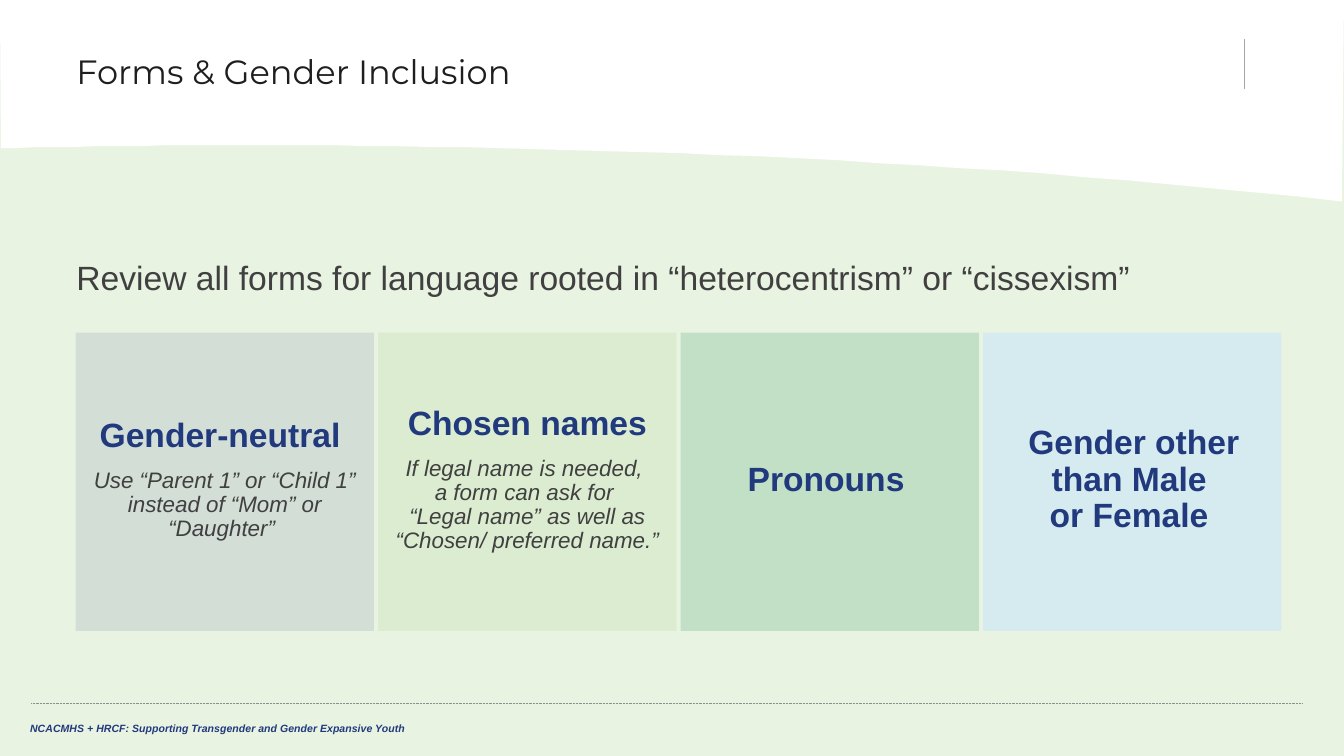
from dataclasses import dataclass

import pptx
import pptx.dml.color
import pptx.enum.dml
import pptx.enum.shapes
import pptx.enum.text
import pptx.oxml.ns
import pptx.presentation
import pptx.shapes.autoshape
import pptx.slide
import pptx.text.text
import pptx.util
from lxml import etree

EMU_PER_PX = 9144  # 100 px to the inch
CURVE_STEPS = 40

Align = pptx.enum.text.PP_ALIGN
Anchor = pptx.enum.text.MSO_ANCHOR
Point = tuple[float, float]


@dataclass(frozen=True)
class Theme:
    background: str = "E9F3E2"
    white: str = "FFFFFF"
    navy: str = "21397D"
    title: str = "1E1E1E"
    body: str = "404040"
    green: str = "92C56E"
    emerald: str = "1A8F52"
    sky: str = "D6EBEF"
    footer_rule: str = "8E8E8E"
    header_rule: str = "A5A5A5"
    title_font: str = "Montserrat"
    body_font: str = "Arial"
    heading_size: float = 24
    detail_size: float = 16
    footer_size: float = 7.5


THEME = Theme()


@dataclass(frozen=True)
class Box:
    left: int
    top: int
    width: int
    height: int


@dataclass(frozen=True)
class TextStyle:
    size: float
    color: str
    font: str = THEME.body_font
    bold: bool = False
    italic: bool = False


@dataclass(frozen=True)
class Rule:
    start: Point
    end: Point
    color: str
    dash: pptx.enum.dml.MSO_LINE | None = None


@dataclass(frozen=True)
class Card:
    fill: str
    opacity: int
    text_left: int
    text_width: int
    heading: str
    detail: str = ""


TITLE = TextStyle(THEME.heading_size, THEME.title, THEME.title_font)
LEAD = TextStyle(THEME.heading_size, THEME.body)
HEADING = TextStyle(THEME.heading_size, THEME.navy, bold=True)
DETAIL = TextStyle(THEME.detail_size, THEME.body, italic=True)
FOOTER = TextStyle(THEME.footer_size, THEME.navy, bold=True, italic=True)

CARD_LEFT, CARD_TOP, CARD_SIDE, CARD_PITCH = 75, 330, 296, 300
CARD_TEXT_TOP, CARD_TEXT_HEIGHT = 328, 297
CARDS = (
    Card(THEME.navy, 11, 76, 294, "Gender-neutral ",
         "Use “Parent 1” or “Child 1” instead of “Mom” or “Daughter” "),
    Card(THEME.green, 14, 374, 298, "Chosen names",
         "If legal name is needed, \na form can ask for \n"
         "“Legal name” as well as “Chosen/ preferred name.”"),
    Card(THEME.emerald, 19, 680, 288, "Pronouns "),
    Card(THEME.sky, 100, 977, 295, "Gender other than Male \nor Female "),
)
RULES = (
    Rule((31, 698), (1291, 698), THEME.footer_rule, pptx.enum.dml.MSO_LINE.ROUND_DOT),
    Rule((1234, 88), (1234, 39), THEME.header_rule),
)


def emu(px: float) -> pptx.util.Emu:
    return pptx.util.Emu(round(px * EMU_PER_PX))


def rgb(color: str) -> pptx.dml.color.RGBColor:
    return pptx.dml.color.RGBColor.from_string(color)


def paint(shape: pptx.shapes.autoshape.Shape, color: str, opacity: int = 100) -> None:
    """Give a shape a plain fill, with no line and no shadow."""
    shape.shadow.inherit = False
    shape.line.fill.background()
    shape.fill.solid()
    shape.fill.fore_color.rgb = rgb(color)
    if opacity < 100:
        color_element = shape.fill._xPr.find(".//" + pptx.oxml.ns.qn("a:srgbClr"))
        alpha = etree.SubElement(color_element, pptx.oxml.ns.qn("a:alpha"))
        alpha.set("val", str(opacity * 1000))


def add_styled_text(paragraph: pptx.text.text._Paragraph, text: str, style: TextStyle) -> None:
    for index, line in enumerate(text.split("\n")):
        if index:
            paragraph.add_line_break()
        run = paragraph.add_run()
        run.text = line
        run.font.name = style.font
        run.font.size = pptx.util.Pt(style.size)
        run.font.bold = style.bold
        run.font.italic = style.italic
        run.font.color.rgb = rgb(style.color)


def add_text(slide: pptx.slide.Slide, box: Box, parts: list[tuple[str, TextStyle]],
             align: Align = Align.LEFT, anchor: Anchor = Anchor.TOP,
             line_spacing: float = 0.9) -> None:
    shape = slide.shapes.add_textbox(
        emu(box.left), emu(box.top), emu(box.width), emu(box.height))
    frame = shape.text_frame
    frame.word_wrap = True
    frame.vertical_anchor = anchor
    for index, (text, style) in enumerate(parts):
        paragraph = frame.add_paragraph() if index else frame.paragraphs[0]
        paragraph.alignment = align
        paragraph.line_spacing = line_spacing
        if index:
            paragraph.space_before = pptx.util.Pt(10)
        add_styled_text(paragraph, text, style)


def curve_points(start: Point, control_1: Point, control_2: Point, end: Point) -> list[Point]:
    """Sample a cubic curve at equal steps."""
    points = []
    for step in range(CURVE_STEPS + 1):
        t = step / CURVE_STEPS
        weights = ((1 - t) ** 3, 3 * t * (1 - t) ** 2, 3 * t * t * (1 - t), t ** 3)
        x, y = (sum(weight * value for weight, value in zip(weights, axis))
                for axis in zip(start, control_1, control_2, end))
        points.append((x, y))
    return points


def add_header(slide: pptx.slide.Slide) -> None:
    edge = curve_points((1331, 200), (762, 136), (207, 142), (1, 147))
    builder = slide.shapes.build_freeform(0, 0, scale=EMU_PER_PX)
    builder.add_line_segments([(1333, 0), *edge], close=True)
    paint(builder.convert_to_shape(), THEME.white)


def add_rule(slide: pptx.slide.Slide, rule: Rule) -> None:
    connector = slide.shapes.add_connector(
        pptx.enum.shapes.MSO_CONNECTOR.STRAIGHT, *map(emu, rule.start + rule.end))
    connector.line.width = pptx.util.Pt(0.5)
    connector.line.color.rgb = rgb(rule.color)
    if rule.dash is not None:
        connector.line.dash_style = rule.dash
    etree.SubElement(connector._element.spPr, pptx.oxml.ns.qn("a:effectLst"))


def add_cards(slide: pptx.slide.Slide) -> None:
    for index, card in enumerate(CARDS):
        square = slide.shapes.add_shape(
            pptx.enum.shapes.MSO_SHAPE.RECTANGLE, emu(CARD_LEFT + index * CARD_PITCH),
            emu(CARD_TOP), emu(CARD_SIDE), emu(CARD_SIDE))
        paint(square, card.fill, card.opacity)
        parts = [(card.heading, HEADING)]
        if card.detail:
            parts.append((card.detail, DETAIL))
        add_text(slide, Box(card.text_left, CARD_TEXT_TOP, card.text_width, CARD_TEXT_HEIGHT),
                 parts, Align.CENTER, Anchor.MIDDLE)


def main() -> None:
    presentation = pptx.Presentation()
    presentation.slide_width, presentation.slide_height = emu(1333), emu(750)
    slide = presentation.slides.add_slide(presentation.slide_layouts[6])
    slide.background.fill.solid()
    slide.background.fill.fore_color.rgb = rgb(THEME.background)
    add_header(slide)
    for rule in RULES:
        add_rule(slide, rule)
    add_text(slide, Box(20, 711, 672, 23),
             [("NCACMHS + HRCF: Supporting Transgender and Gender Expansive Youth", FOOTER)],
             line_spacing=1.0)
    add_text(slide, Box(66, 0, 1131, 147), [("Forms & Gender Inclusion", TITLE)],
             anchor=Anchor.MIDDLE)
    add_text(slide, Box(66, 254, 1216, 72),
             [("Review all forms for language rooted in “heterocentrism” or “cissexism”", LEAD)])
    add_cards(slide)
    presentation.save("out.pptx")


if __name__ == "__main__":
    main()
